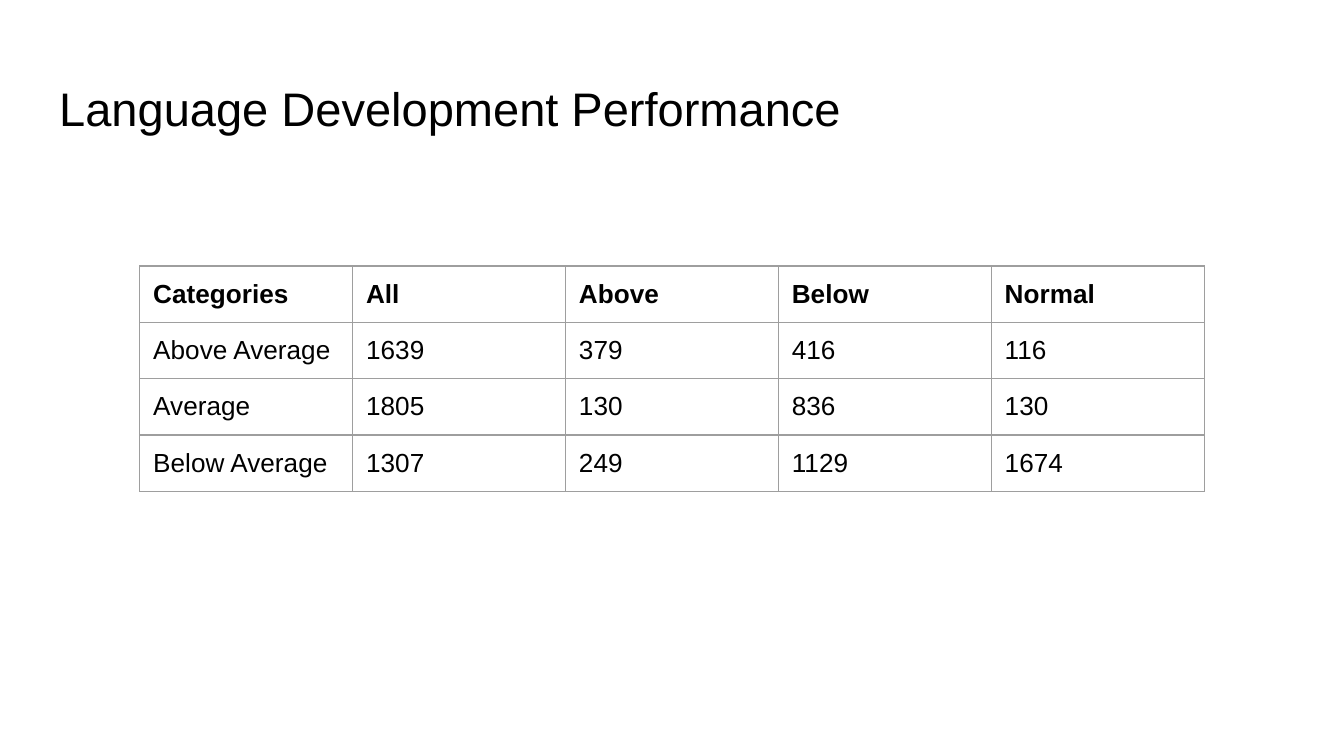
from lxml.etree import SubElement
from pptx import Presentation
from pptx.dml.color import RGBColor
from pptx.enum.text import MSO_ANCHOR, PP_ALIGN
from pptx.oxml.ns import qn
from pptx.util import Inches, Pt

COLORS = {"text": "000000", "border": "9E9E9E", "background": "FFFFFF"}
FONT = "Arial"
INSET = Inches(0.1)
ROWS = [
    ["Categories", "All", "Above", "Below", "Normal"],
    ["Above Average", "1639", "379", "416", "116"],
    ["Average", "1805", "130", "836", "130"],
    ["Below Average", "1307", "249", "1129", "1674"],
]


def set_insets(target):
    target.margin_left = target.margin_right = INSET
    target.margin_top = target.margin_bottom = INSET


def format_paragraph(paragraph, size, bold=False):
    paragraph.alignment = PP_ALIGN.LEFT
    font = paragraph.font
    font.name, font.size, font.bold = FONT, Pt(size), bold
    font.color.rgb = RGBColor.from_string(COLORS["text"])


def add_title(slide, text):
    title = slide.shapes.title
    title.left, title.top = Inches(0.34), Inches(0.49)
    title.width, title.height = Inches(9.32), Inches(0.62)
    frame = title.text_frame
    frame.text = text
    frame.vertical_anchor = MSO_ANCHOR.MIDDLE
    set_insets(frame)
    format_paragraph(frame.paragraphs[0], 25.2)


def add_borders(cell):
    properties = cell._tc.get_or_add_tcPr()
    for side in ("a:lnL", "a:lnR", "a:lnT", "a:lnB"):
        line = SubElement(properties, qn(side), w=str(Pt(0.75)))
        fill = SubElement(line, qn("a:solidFill"))
        SubElement(fill, qn("a:srgbClr"), val=COLORS["border"])


def format_cell(cell, text, bold):
    cell.text = text
    cell.vertical_anchor = MSO_ANCHOR.TOP
    set_insets(cell)
    format_paragraph(cell.text_frame.paragraphs[0], 14, bold)
    # Borders come before the fill in the cell properties
    add_borders(cell)
    cell.fill.background()


def add_data_table(slide, rows):
    width, height = Inches(7.92), Inches(1.67)
    row_count, column_count = len(rows), len(rows[0])
    # The table shares its width and height equally among columns and rows
    table = slide.shapes.add_table(
        row_count, column_count, Inches(1.04), Inches(1.98), width, height).table
    table.horz_banding = False
    for row_index, row in enumerate(rows):
        for column_index, text in enumerate(row):
            format_cell(table.cell(row_index, column_index), text,
                        bold=row_index == 0)


def main():
    # Widescreen format, 16:9
    presentation = Presentation()
    presentation.slide_width = Inches(10)
    presentation.slide_height = presentation.slide_width * 9 // 16

    # Title Only layout on a plain background
    slide = presentation.slides.add_slide(presentation.slide_layouts[5])
    slide.background.fill.solid()
    slide.background.fill.fore_color.rgb = RGBColor.from_string(COLORS["background"])

    add_title(slide, "Language Development Performance")
    add_data_table(slide, ROWS)
    presentation.save("out.pptx")


if __name__ == "__main__":
    main()
